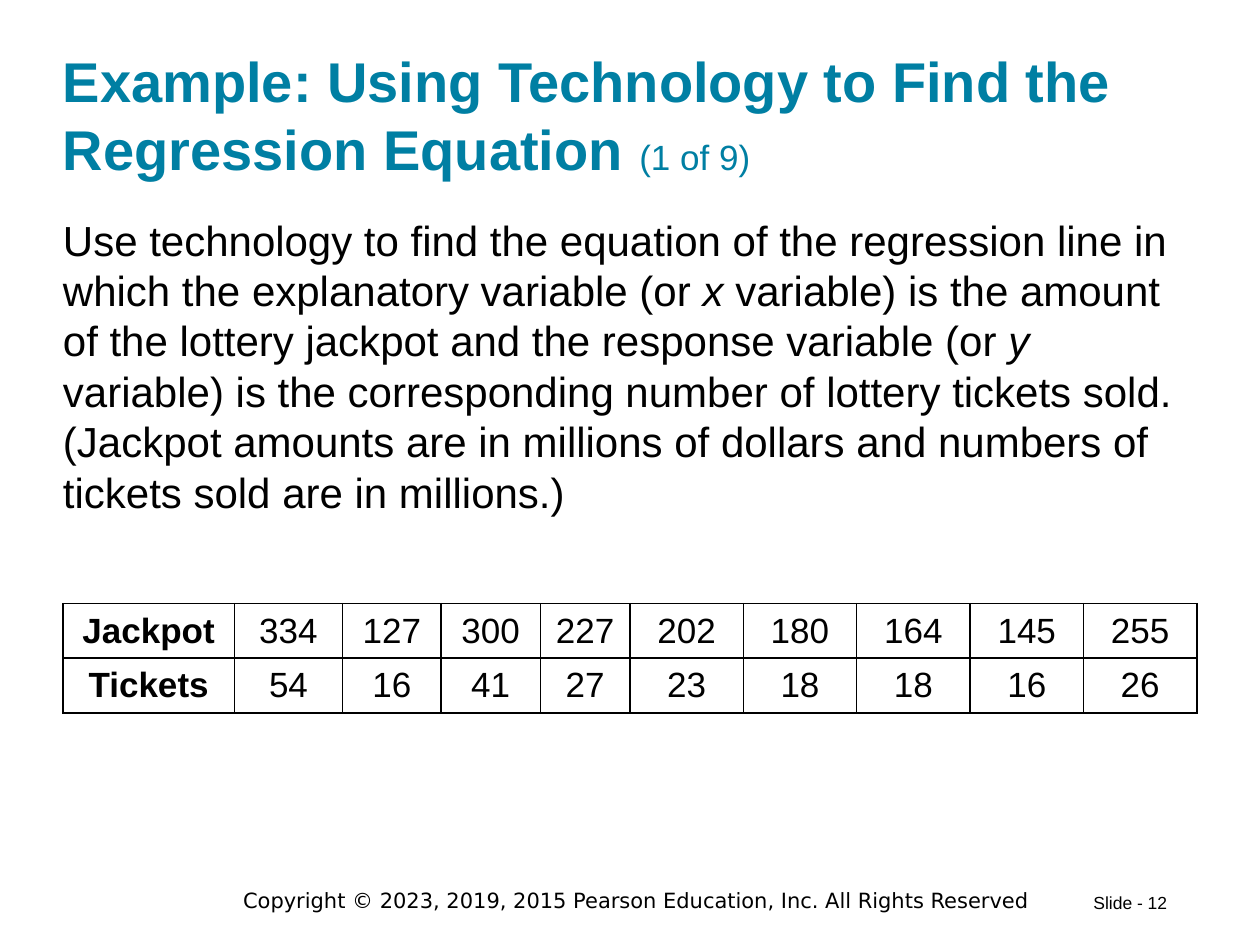
import pptx
import pptx.util
import pptx.dml.color
import pptx.enum.text
import pptx.oxml
import pptx.oxml.ns
from lxml import etree

Inches = pptx.util.Inches
Pt = pptx.util.Pt
ALIGN = pptx.enum.text.PP_ALIGN
ANCHOR = pptx.enum.text.MSO_ANCHOR
BLACK = pptx.dml.color.RGBColor(0, 0, 0)
TEAL = pptx.dml.color.RGBColor(0x00, 0x7F, 0xA3)

# Content: runs are (text, font changes)
TITLE = [
    ("Example: Using Technology to Find the Regression Equation ", {"bold": True}),
    ("(1 of 9)", {"size": Pt(20)}),
]
BODY = [
    ("Use technology to find the equation of the regression line in which "
     "the explanatory variable (or ", {}),
    ("x ", {"italic": True}),
    ("variable) is the amount of the lottery jackpot and the response variable (or ", {}),
    ("y ", {"italic": True}),
    ("variable) is the corresponding number of lottery tickets sold. (Jackpot amounts "
     "are in millions of dollars and numbers of tickets sold are in millions.)", {}),
]
COPYRIGHT = [("Copyright © 2023, 2019, 2015 Pearson Education, Inc. All Rights Reserved", {})]
SLIDE_NUMBER = [("Slide - 12", {})]
LOTTERY = [
    ("Jackpot", 334, 127, 300, 227, 202, 180, 164, 145, 255),
    ("Tickets", 54, 16, 41, 27, 23, 18, 18, 16, 26),
]
COLUMN_WIDTHS = [1.36, 0.86, 0.78, 0.79, 0.71] + [0.9] * 5
ROW_HEIGHT = 0.41


def write(paragraph, runs, size, color=BLACK, name="Arial"):
    for text, changes in runs:
        span = paragraph.add_run()
        span.text = text
        font = {"name": name, "size": Pt(size), "bold": False, "italic": False, **changes}
        for key, value in font.items():
            setattr(span.font, key, value)
        span.font.color.rgb = color


def add_text(page, place, runs, size, margins=(0, 0), wrap=True,
             anchor=ANCHOR.TOP, align=ALIGN.LEFT, **style):
    frame = page.shapes.add_textbox(*map(Inches, place)).text_frame
    side, end = map(Inches, margins)
    settings = {"word_wrap": wrap, "vertical_anchor": anchor,
                "margin_left": side, "margin_right": side,
                "margin_top": end, "margin_bottom": end}
    for key, value in settings.items():
        setattr(frame, key, value)
    frame.paragraphs[0].alignment = align
    write(frame.paragraphs[0], runs, size, **style)


def add_borders(cell):
    properties = cell._tc.get_or_add_tcPr()
    for position, side in enumerate(("lnL", "lnR", "lnT", "lnB")):
        line = etree.Element(pptx.oxml.ns.qn(f"a:{side}"), w=str(Pt(1)))
        fill = etree.SubElement(line, pptx.oxml.ns.qn("a:solidFill"))
        etree.SubElement(fill, pptx.oxml.ns.qn("a:srgbClr"), val=str(BLACK))
        properties.insert(position, line)


def add_lottery_table(page):
    table = page.shapes.add_table(
        len(LOTTERY), len(COLUMN_WIDTHS), Inches(0.5), Inches(4.79),
        Inches(sum(COLUMN_WIDTHS)), Inches(ROW_HEIGHT * len(LOTTERY))).table
    table.first_row = table.horz_banding = False
    for column, width in zip(table.columns, COLUMN_WIDTHS):
        column.width = Inches(width)
    for row, values in zip(table.rows, LOTTERY):
        row.height = Inches(ROW_HEIGHT)
        for index, (cell, value) in enumerate(zip(row.cells, values)):
            cell.fill.background()
            cell.vertical_anchor = ANCHOR.MIDDLE
            paragraph = cell.text_frame.paragraphs[0]
            paragraph.alignment = ALIGN.CENTER
            write(paragraph, [(str(value), {"bold": index == 0})], 20)
            add_borders(cell)


def main():
    deck = pptx.Presentation()
    deck.slide_width, deck.slide_height = Inches(10), Inches(7.5)
    page = deck.slides.add_slide(deck.slide_layouts[6])

    # Footer
    add_text(page, (1.76, 7.03, 6.58, 0.22), COPYRIGHT, 12, margins=(0.1, 0.05),
             anchor=ANCHOR.MIDDLE, align=ALIGN.CENTER, name="DejaVu Sans")
    add_text(page, (8.58, 7.03, 0.81, 0.27), SLIDE_NUMBER, 10,
             margins=(0.1, 0.05), wrap=False)

    # Title, question and data
    add_text(page, (0.5, 0.24, 9, 1.2), TITLE, 32, anchor=ANCHOR.BOTTOM, color=TEAL)
    add_text(page, (0.5, 1.7, 9, 2.54), BODY, 24)
    add_lottery_table(page)

    deck.save("out.pptx")


if __name__ == "__main__":
    main()
